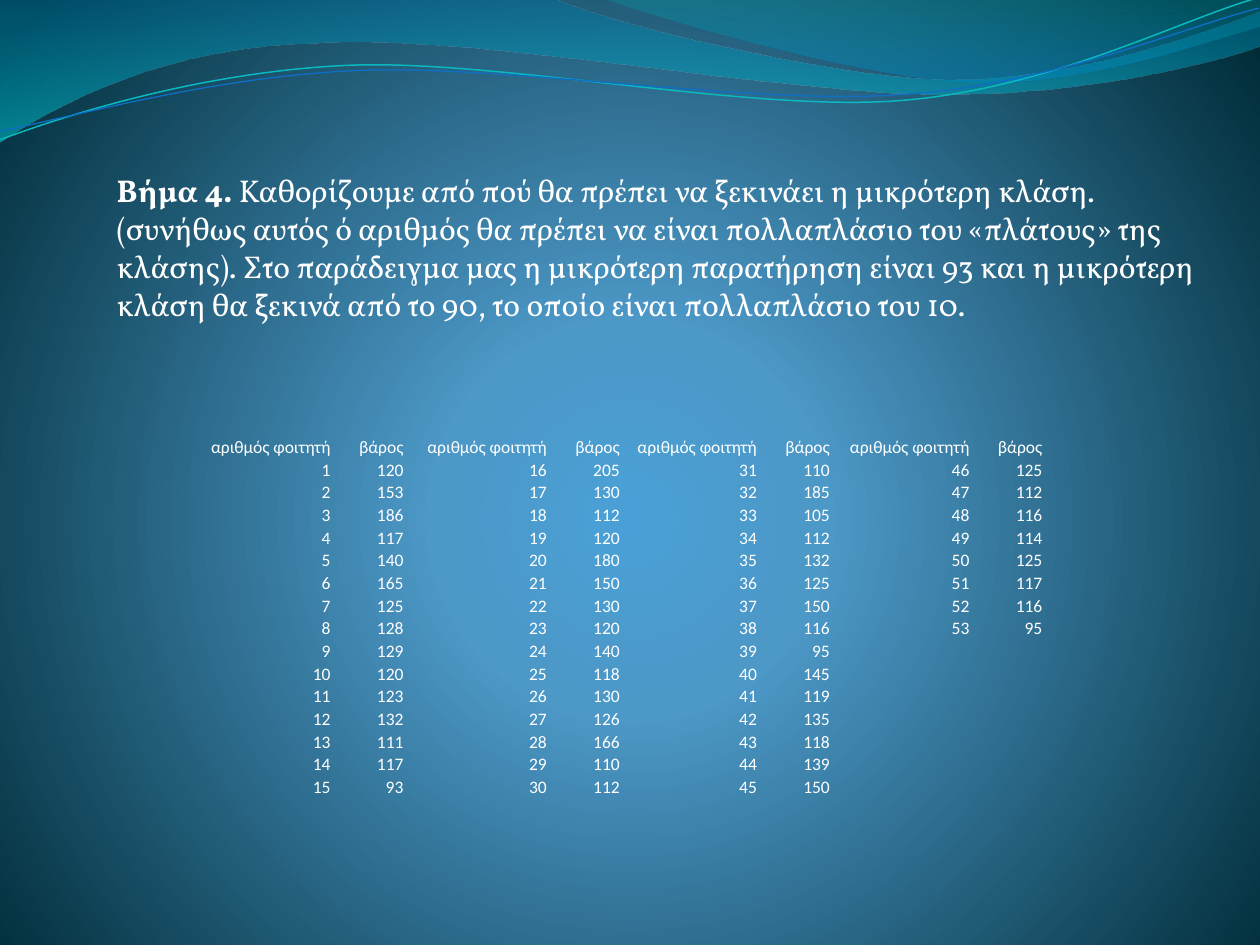
from lxml.etree import SubElement
from pptx import Presentation
from pptx.dml.color import RGBColor
from pptx.enum.text import MSO_ANCHOR, MSO_AUTO_SIZE, PP_ALIGN
from pptx.oxml import parse_xml
from pptx.oxml.ns import nsdecls, qn
from pptx.util import Pt

WHITE = "FFFFFF"
NO_STYLE = "{2D5ABB26-0587-4C30-8999-92F81FD0307C}"
CENTRE_GLOW = ('<a:path path="circle">'
               '<a:fillToRect l="10000" t="110000" r="10000" b="100000"/></a:path>')
DOWNWARD = '<a:lin ang="5400000" scaled="1"/>'

BANDS = [
    ((-0.7, -0.7, 721.4, 82.1),
     [(0.7, 0.7), (317.5, 0),
      (343.4, 12.9, 478.8, 46.1, 546.5, 46.1),
      (614.9, 46.1, 690.5, 19.4, 720.7, 7.2), (721.4, 26.6),
      (708.5, 32.4, 627.1, 55.4, 537.8, 54.7),
      (448.5, 54.7, 275.7, 20.9, 185.7, 25.2),
      (93.6, 26.6, 33.8, 60.5, 0, 82.1), (0.7, 0.7)],
     [(0, "0074A1", 45), (100, "00C6CF", 55)]),
    ((344.9, -0.7, 375.1, 50.4),
     [(0, 0),
      (21.6, 8.6, 146.1, 45.3, 208.8, 47.5),
      (271.4, 50.4, 347, 23.7, 375.1, 15.8), (375.1, 0.7), (0, 0)],
     [(0, "00A1A9", 30), (80, "008BBF", 45)]),
]
STRAND_ROTATION = 357.3
STRANDS = [
    ((-1.4, 15.8, 721.6, 51.1),
     [(0, 47.1),
      (35.1, 35.8, 115.5, 13.6, 201.2, 14),
      (286.3, 14.5, 427.2, 51.4, 513.9, 49),
      (600.5, 46.6, 677.9, 9.9, 721.6, 0)], "0AB8BF", 0.85),
    ((-1.4, 21.6, 722.2, 41.8),
     [(0, 36.3),
      (34.4, 32.1, 119.7, 10.9, 205.5, 11.4),
      (292, 11.8, 430.3, 42.2, 517, 39.7),
      (602.8, 38.1, 679.9, 8.5, 722.2, 0)], "0F6FC6", 0.75),
]

STEP = "Βήμα 4. "
EXPLANATION = (
    "Καθορίζουμε από πού θα πρέπει να ξεκινάει η μικρότερη κλάση. "
    "(συνήθως αυτός ό αριθμός θα πρέπει να είναι πολλαπλάσιο του «πλάτους» "
    "της κλάσης). Στο παράδειγμα μας η μικρότερη παρατήρηση είναι 93 και η "
    "μικρότερη κλάση θα ξεκινά από το 90, το οποίο είναι πολλαπλάσιο του 10.")

HEADINGS = ("αριθμός φοιτητή", "βάρος")
WEIGHTS = [
    120, 153, 186, 117, 140, 165, 125, 128, 129, 120, 123, 132, 111, 117, 93,
    205, 130, 112, 120, 180, 150, 130, 120, 140, 118, 130, 126, 166, 110, 112,
    110, 185, 105, 112, 132, 125, 150, 116, 95, 145, 119, 135, 118, 139, 150,
    125, 112, 116, 114, 125, 117, 116, 95]
STUDENTS_PER_BLOCK = 15
COLUMN_SHARES = (1.02, 0.58, 1.14, 0.58, 1.09, 0.58, 1.11, 0.58)


def colour(value):
    """Turn a hex string into a colour."""
    return RGBColor.from_string(value)


def set_gradient(fill, element, stops, direction):
    """Give the fill held in element a gradient of (position, colour, opacity) stops."""
    fill.gradient()
    marks = "".join(
        f'<a:gs pos="{position * 1000}"><a:srgbClr val="{value}">'
        f'<a:alpha val="{opacity * 1000}"/></a:srgbClr></a:gs>'
        for position, value, opacity in stops)
    gradient = element.find(".//" + qn("a:gradFill"))
    gradient.getparent().replace(gradient, parse_xml(
        f'<a:gradFill {nsdecls("a")} rotWithShape="1">'
        f'<a:gsLst>{marks}</a:gsLst>{direction}</a:gradFill>'))


def add_curve(slide, left, top, width, height, path):
    """Draw lines and cubic curves given relative to the box."""
    ends = [(Pt(left + part[-2]), Pt(top + part[-1])) for part in path]
    builder = slide.shapes.build_freeform(*ends[0])
    builder.add_line_segments(ends[1:], close=path[0] == path[-1])
    shape = builder.convert_to_shape()
    shape.left, shape.top = Pt(left), Pt(top)
    shape.width, shape.height = Pt(width), Pt(height)
    outline = shape.element.find(".//" + qn("a:path"))
    outline.set("w", str(Pt(width)))
    outline.set("h", str(Pt(height)))
    for step, part in zip(list(outline), path):
        if len(part) == 6:
            curve = parse_xml(f'<a:cubicBezTo {nsdecls("a")}/>')
            outline.replace(step, curve)
            step = curve
        for point in list(step):
            step.remove(point)
        for x, y in zip(part[::2], part[1::2]):
            SubElement(step, qn("a:pt"), x=str(Pt(x)), y=str(Pt(y)))
    shape.shadow.inherit = False
    return shape


def add_waves(slide, left, top):
    """Draw the wave bands and the thin strands along the top edge."""
    for (x, y, width, height), path, stops in BANDS:
        band = add_curve(slide, left + x, top + y, width, height, path)
        band.line.fill.background()
        set_gradient(band.fill, band.element, stops, DOWNWARD)
    for (x, y, width, height), path, value, weight in STRANDS:
        strand = add_curve(slide, left + x, top + y, width, height, path)
        strand.rotation = STRAND_ROTATION
        strand.fill.background()
        strand.line.color.rgb = colour(value)
        strand.line.width = Pt(weight)


def add_explanation(slide, left, top, width, height):
    """Place the step description with its bold opening."""
    box = slide.shapes.add_textbox(Pt(left), Pt(top), Pt(width), Pt(height))
    frame = box.text_frame
    frame.word_wrap = True
    frame.auto_size = MSO_AUTO_SIZE.SHAPE_TO_FIT_TEXT
    for text, bold in ((STEP, True), (EXPLANATION, False)):
        run = frame.paragraphs[0].add_run()
        run.text = text
        run.font.name = "Vollkorn"
        run.font.size = Pt(18)
        run.font.bold = bold
        run.font.color.rgb = colour(WHITE)


def weight_rows():
    """Arrange the students in side-by-side blocks under an empty row and a heading."""
    blocks = len(COLUMN_SHARES) // 2
    rows = [[""] * len(COLUMN_SHARES), list(HEADINGS) * blocks]
    for offset in range(STUDENTS_PER_BLOCK):
        row = []
        for block in range(blocks):
            index = block * STUDENTS_PER_BLOCK + offset
            known = index < len(WEIGHTS)
            row += [str(index + 1), str(WEIGHTS[index])] if known else ["", ""]
        rows.append(row)
    return rows


def format_cell(cell, text):
    """Fill in one cell with right-aligned small text."""
    cell.fill.background()
    cell.margin_left = cell.margin_right = cell.margin_top = Pt(0.7)
    cell.margin_bottom = 0
    cell.vertical_anchor = MSO_ANCHOR.BOTTOM
    paragraph = cell.text_frame.paragraphs[0]
    paragraph.text = text
    paragraph.alignment = PP_ALIGN.RIGHT
    for run in paragraph.runs:
        run.font.name = "Calibri"
        run.font.size = Pt(10)
        run.font.color.rgb = colour(WHITE)
    if not text:
        SubElement(paragraph._p, qn("a:endParaRPr")).set("sz", "1000")


def add_weight_table(slide, left, top, width, height):
    """Place the table of student numbers and weights."""
    rows = weight_rows()
    frame = slide.shapes.add_table(len(rows), len(COLUMN_SHARES),
                                   Pt(left), Pt(top), Pt(width), Pt(height))
    table = frame.table
    table.first_row = table.horz_banding = False
    frame.element.find(".//" + qn("a:tableStyleId")).text = NO_STYLE
    for column, share in zip(table.columns, COLUMN_SHARES):
        column.width = Pt(width * share / sum(COLUMN_SHARES))
    for row, texts in zip(table.rows, rows):
        row.height = Pt(height / len(rows))
        for cell, text in zip(row.cells, texts):
            format_cell(cell, text)


def main():
    """Build the slide and save it."""
    presentation = Presentation()
    presentation.slide_width, presentation.slide_height = Pt(720), Pt(540)
    slide = presentation.slides.add_slide(presentation.slide_layouts[6])
    set_gradient(slide.background.fill, slide.element,
                 [(0, "4AA0D6", 100), (25, "4C98C7", 100), (100, "002C38", 100)],
                 CENTRE_GLOW)
    add_waves(slide, 0, 0)
    add_explanation(slide, 59.6, 94.3, 640.8, 290.9)
    add_weight_table(slide, 116.2, 235.8, 480.2, 220.3)
    presentation.save("out.pptx")


if __name__ == "__main__":
    main()
